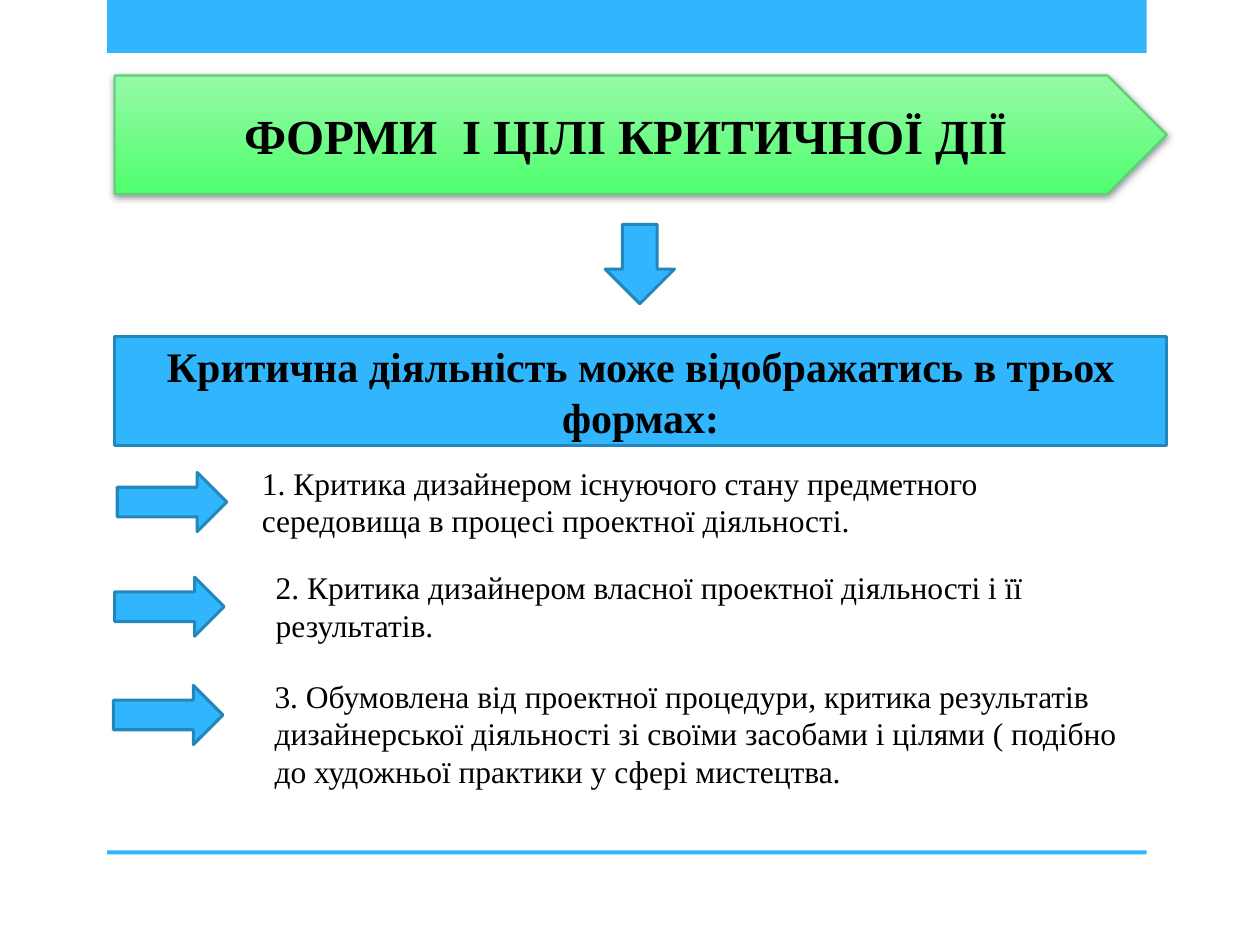
from dataclasses import dataclass

from lxml import etree
from pptx import Presentation
from pptx.dml.color import RGBColor
from pptx.enum.shapes import MSO_SHAPE as Preset
from pptx.enum.text import MSO_ANCHOR as Anchor, MSO_AUTO_SIZE as AutoSize, PP_ALIGN as Align
from pptx.oxml.ns import qn
from pptx.util import Pt


@dataclass(frozen=True)
class Theme:
    blue: str = "31B6FD"
    blue_edge: str = "2487BB"
    green_top: str = "96F9A6"
    green_bottom: str = "50FF6E"
    green_edge: str = "5BD078"
    ink: str = "000000"
    font: str = "Times New Roman"
    title_size: float = 28
    heading_size: float = 24
    body_size: float = 18
    edge_width: float = 1.75
    title_edge_width: float = 1.25


THEME = Theme()
FORMS = [
    ("1. Критика дизайнером існуючого стану предметного середовища "
     "в процесі проектної діяльності.", 67, 270, 142.6, 51.1),
    ("2. Критика дизайнером власної проектної діяльності і її результатів.",
     65.5, 329.8, 150.5, 51.1),
    ("3. Обумовлена від проектної процедури, критика результатів дизайнерської "
     "діяльності зі своїми засобами і цілями ( подібно до художньої практики "
     "у сфері мистецтва.", 64.8, 391.7, 149.8, 72.7),
]


def color(value):
    return RGBColor.from_string(value)


def add_block(slide, preset, box, edge=THEME.blue_edge, width=THEME.edge_width):
    block = slide.shapes.add_shape(preset, *map(Pt, box))
    block.shadow.inherit = False
    block.fill.solid()
    block.fill.fore_color.rgb = color(THEME.blue)
    if edge:
        block.line.color.rgb = color(edge)
        block.line.width = Pt(width)
    else:
        block.line.fill.background()
    return block


def write(shape, text, size, bold=False, align=None):
    frame = shape.text_frame
    frame.word_wrap = True
    paragraph = frame.paragraphs[0]
    paragraph.text = text
    paragraph.alignment = align
    font = paragraph.font
    font.name = THEME.font
    font.size = Pt(size)
    font.bold = bold
    font.color.rgb = color(THEME.ink)
    return frame


def add_soft_shadow(shape):
    effects = shape._element.spPr.find(qn("a:effectLst"))
    shadow = etree.SubElement(effects, qn("a:outerShdw"), blurRad=str(Pt(4)),
                              dist=str(Pt(1)), dir="5280000", rotWithShape="0")
    ink = etree.SubElement(shadow, qn("a:srgbClr"), val=THEME.ink)
    etree.SubElement(ink, qn("a:alpha"), val="40000")


def add_frame_bars(slide, left, width):
    for top, height in ((0, 30.2), (486, 2.2)):
        add_block(slide, Preset.RECTANGLE, (left, top, width, height), edge=None)


def add_title(slide, box):
    title = add_block(slide, Preset.PENTAGON, box, THEME.green_edge, THEME.title_edge_width)
    title.fill.gradient()
    title.fill.gradient_angle = 270
    for stop, shade in zip(title.fill.gradient_stops, (THEME.green_top, THEME.green_bottom)):
        stop.color.rgb = color(shade)
    add_soft_shadow(title)
    frame = write(title, "ФОРМИ  І ЦІЛІ КРИТИЧНОЇ ДІЇ", THEME.title_size, True, Align.CENTER)
    frame.vertical_anchor = Anchor.MIDDLE


def add_heading(slide, box):
    heading = add_block(slide, Preset.RECTANGLE, box)
    frame = write(heading, "Критична діяльність може відображатись в трьох формах:",
                  THEME.heading_size, True, Align.CENTER)
    frame.vertical_anchor = Anchor.MIDDLE


def add_form(slide, text, arrow_left, arrow_top, text_left, text_height):
    add_block(slide, Preset.RIGHT_ARROW, (arrow_left, arrow_top, 62.6, 33.8))
    box = (text_left, arrow_top - 8.6, 516.2, text_height)
    statement = slide.shapes.add_textbox(*map(Pt, box))
    frame = write(statement, text, THEME.body_size)
    frame.auto_size = AutoSize.SHAPE_TO_FIT_TEXT


def main():
    deck = Presentation()
    deck.slide_width, deck.slide_height = Pt(720), Pt(540)
    slide = deck.slides.add_slide(deck.slide_layouts[6])
    add_frame_bars(slide, 61.2, 594)
    add_title(slide, (65.5, 43.2, 601.2, 67.7))
    add_block(slide, Preset.DOWN_ARROW, (345.8, 128.2, 39.6, 45.4))
    add_heading(slide, (65.5, 192.2, 601.2, 62.6))
    for form in FORMS:
        add_form(slide, *form)
    deck.save("out.pptx")


if __name__ == "__main__":
    main()
